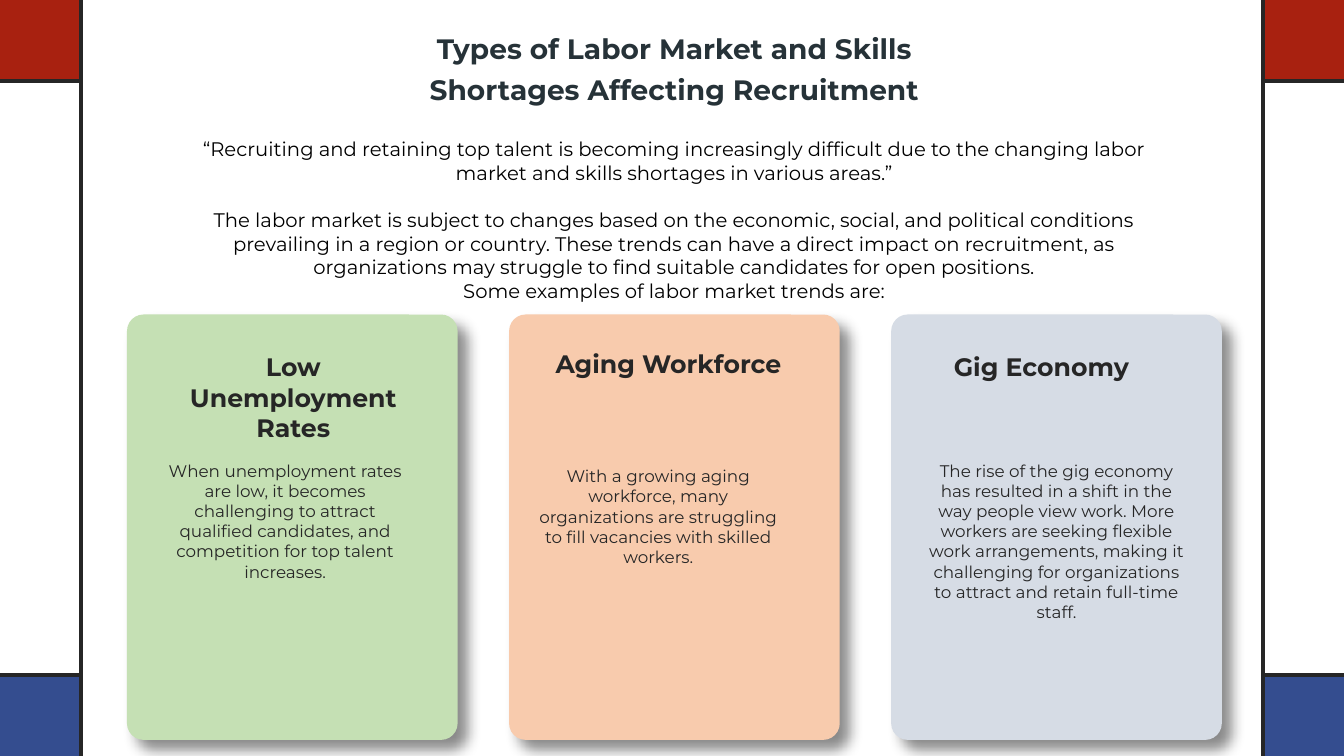
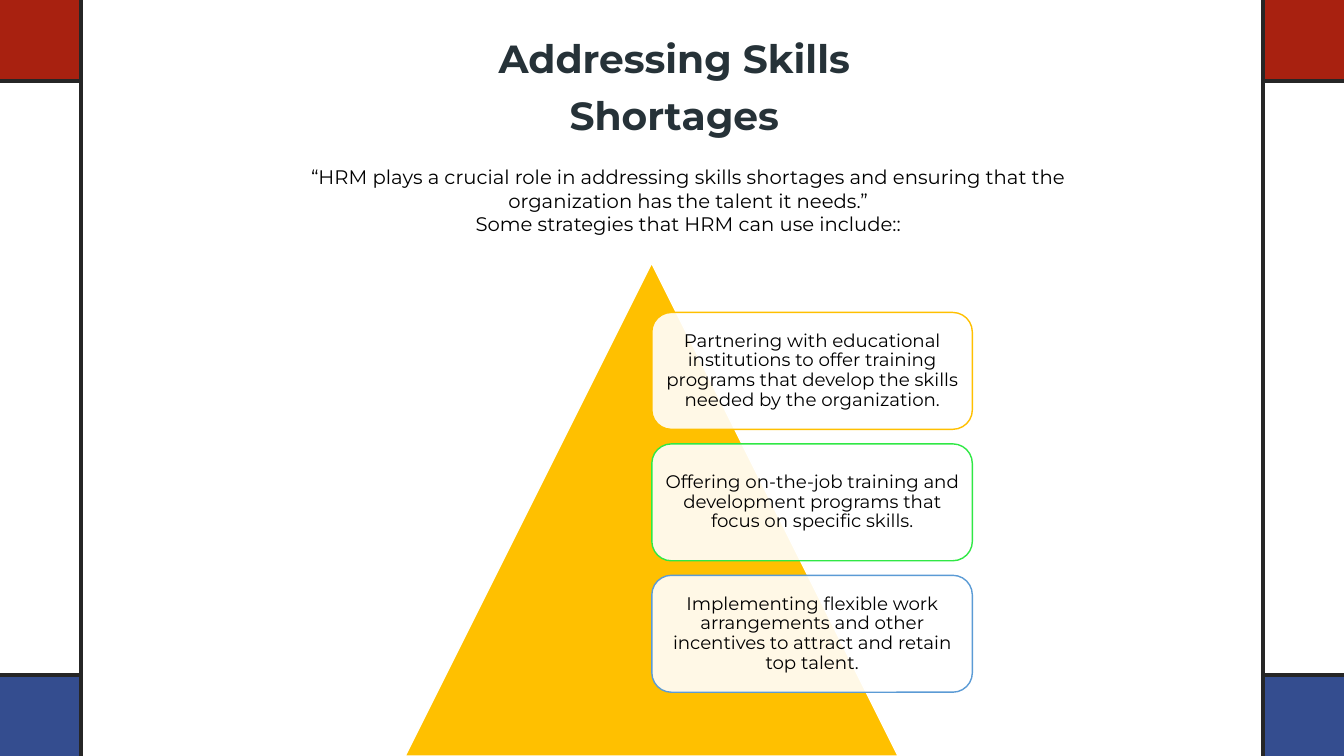
from dataclasses import dataclass
from typing import Any, NamedTuple

from lxml import etree
from pptx import Presentation
from pptx import util as u
from pptx.dml.color import RGBColor
from pptx.enum import shapes, text
from pptx.oxml import ns
from pptx.shapes.autoshape import Shape
from pptx.slide import Slide
from pptx.text.text import TextFrame

# Square grid: 100 columns across a 13.33 by 7.5 inch slide.
COLUMNS, ROWS = 100, 56.25
CELL = u.Inches(7.5) / ROWS


@dataclass(frozen=True)
class Theme:
    font: str = "Montserrat"
    red: str = "A82110"
    blue: str = "344D8F"
    rule: str = "262626"
    title: str = "263238"
    black: str = "000000"
    white: str = "FFFFFF"
    amber: str = "FFC000"
    green: str = "30E845"
    sky: str = "5B9BD5"
    mint: str = "C5E0B4"
    peach: str = "F8CBAD"
    mist: str = "D6DCE5"
    long_title_size: float = 20
    short_title_size: float = 28
    intro_size: float = 14
    heading_size: float = 18
    body_size: float = 12
    strategy_size: float = 13
    rule_width: float = 2.75


THEME = Theme()


class Area(NamedTuple):
    """A rectangle in grid cells."""
    left: float
    top: float
    width: float
    height: float

    def lengths(self) -> list[int]:
        return [cells(value) for value in self]


class Offset(NamedTuple):
    column: float
    row: float


@dataclass(frozen=True)
class TextStyle:
    size: float
    colour: str = THEME.black
    bold: bool = False
    spacing: float | None = None
    inset: float | None = None
    anchor: text.MSO_ANCHOR = text.MSO_ANCHOR.TOP


@dataclass(frozen=True)
class Card:
    heading: str
    body: str
    colour: str
    heading_at: Offset
    body_at: Offset


@dataclass(frozen=True)
class Strategy:
    wording: str
    outline: str


HEADING = TextStyle(THEME.heading_size, THEME.rule, bold=True)
BODY = TextStyle(THEME.body_size, THEME.rule)
INTRO = TextStyle(THEME.intro_size)
STRATEGY = TextStyle(THEME.strategy_size, spacing=0.9, inset=0.05,
                     anchor=text.MSO_ANCHOR.MIDDLE)

CARD_AREA = Area(9.45, 23.4, 24.6, 31.65)
CARD_PITCH = 28.43
CARD_TEXT_WIDTH = 20.55
CARDS = (
    Card("Low Unemployment Rates",
         "When unemployment rates are low, it becomes challenging to attract "
         "qualified candidates, and competition for top talent increases.",
         THEME.mint, Offset(2.1, 2.4), Offset(1.5, 10.5)),
    Card("Aging Workforce",
         "With a growing aging workforce, many organizations are struggling "
         "to fill vacancies with skilled workers.",
         THEME.peach, Offset(1.58, 2.18), Offset(0.83, 10.9)),
    Card("Gig Economy",
         "The rise of the gig economy has resulted in a shift in the way "
         "people view work. More workers are seeking flexible work "
         "arrangements, making it challenging for organizations to attract "
         "and retain full-time staff.",
         THEME.mist, Offset(0.9, 2.4), Offset(2.03, 10.5)),
)

PYRAMID_AREA = Area(30.15, 19.58, 36.67, 36.67)
STRATEGY_AREA = Area(48.5, 23.25, 23.85, 8.7)
STRATEGY_PITCH = 9.78
STRATEGIES = (
    Strategy("Partnering with educational institutions to offer training "
             "programs that develop the skills needed by the organization.",
             THEME.amber),
    Strategy("Offering on-the-job training and development programs that "
             "focus on specific skills.", THEME.green),
    Strategy("Implementing flexible work arrangements and other incentives "
             "to attract and retain top talent.", THEME.sky),
)


def cells(count: float) -> int:
    return round(count * CELL)


def rgb(colour: str) -> RGBColor:
    return RGBColor.from_string(colour)


def set_values(target: Any, values: dict[str, Any]) -> None:
    for name, value in values.items():
        setattr(target, name, value)


def write(frame: TextFrame, lines: tuple[str, ...], style: TextStyle,
          gap_before: int | None = None) -> None:
    """Fill a frame; gap_before is the line that gets a line's space above."""
    set_values(frame, {"word_wrap": True, "vertical_anchor": style.anchor})
    if style.inset is not None:
        sides = ("left", "top", "right", "bottom")
        set_values(frame, {f"margin_{side}": u.Inches(style.inset)
                           for side in sides})
    for index, line in enumerate(lines):
        para = frame.add_paragraph() if index else frame.paragraphs[0]
        para.alignment = text.PP_ALIGN.CENTER
        if style.spacing:
            para.line_spacing = style.spacing
        if index and index == gap_before:
            para.space_before = u.Pt(style.size * 1.22)
        span = para.add_run()
        span.text = line
        set_values(span.font, {"name": THEME.font, "size": u.Pt(style.size),
                               "bold": style.bold})
        span.font.color.rgb = rgb(style.colour)


def add_text(page: Slide, area: Area, lines: tuple[str, ...],
             style: TextStyle, gap_before: int | None = None) -> None:
    box = page.shapes.add_textbox(*area.lengths())
    write(box.text_frame, lines, style, gap_before)


def add_panel(page: Slide, kind: shapes.MSO_SHAPE, area: Area, fill: str,
              outline: str | None = None) -> Shape:
    panel = page.shapes.add_shape(kind, *area.lengths())
    panel.shadow.inherit = False
    panel.fill.solid()
    panel.fill.fore_color.rgb = rgb(fill)
    if outline:
        panel.line.color.rgb = rgb(outline)
        panel.line.width = u.Pt(1)
    else:
        panel.line.fill.background()
    return panel


def add_alpha(colour: Any, percent: int) -> None:
    etree.SubElement(colour, ns.qn("a:alpha"), val=str(percent * 1000))


def cast_shadow(panel: Shape) -> None:
    effects = panel._element.spPr.find(ns.qn("a:effectLst"))
    distance = str(u.Pt(10))
    shadow = etree.SubElement(
        effects, ns.qn("a:outerShdw"), blurRad=distance, dist=distance,
        dir=str(45 * 60000), algn="tl", rotWithShape="0")
    colour = etree.SubElement(shadow, ns.qn("a:srgbClr"), val=THEME.black)
    add_alpha(colour, 45)


def add_rule(page: Slide, start: Offset, end: Offset) -> None:
    rule = page.shapes.add_connector(
        shapes.MSO_CONNECTOR.STRAIGHT,
        *(cells(value) for value in (*start, *end)))
    rule.line.color.rgb = rgb(THEME.rule)
    rule.line.width = u.Pt(THEME.rule_width)
    etree.SubElement(rule._element.spPr, ns.qn("a:effectLst"))


def add_frame(page: Slide) -> None:
    """Draw the coloured corners and the rules beside them."""
    band = 6
    for left, inner in ((0, band), (COLUMNS - band, COLUMNS - band)):
        for top, edge, colour in ((0, band, THEME.red),
                                  (ROWS - band, ROWS - band, THEME.blue)):
            add_panel(page, shapes.MSO_SHAPE.RECTANGLE,
                      Area(left, top, band, band), colour)
            add_rule(page, Offset(left, edge), Offset(left + band, edge))
        add_rule(page, Offset(inner, 0), Offset(inner, ROWS))


def add_page(deck: Any, title: str, size: float) -> Slide:
    page = deck.slides.add_slide(deck.slide_layouts[6])
    add_frame(page)
    style = TextStyle(size, THEME.title, bold=True, spacing=1.2, inset=0)
    add_text(page, Area(31.2, 1.88, 37.95, 6), (title,), style)
    return page


def add_card(page: Slide, index: int, card: Card) -> None:
    area = CARD_AREA._replace(left=CARD_AREA.left + index * CARD_PITCH)
    panel = add_panel(page, shapes.MSO_SHAPE.ROUNDED_RECTANGLE, area,
                      card.colour)
    panel.adjustments[0] = 0.05
    cast_shadow(panel)
    for wording, offset, height, style in (
            (card.heading, card.heading_at, 5, HEADING),
            (card.body, card.body_at, 12, BODY)):
        place = Area(area.left + offset.column, area.top + offset.row,
                     CARD_TEXT_WIDTH, height)
        add_text(page, place, (wording,), style)


def add_strategy(page: Slide, index: int, strategy: Strategy) -> None:
    area = STRATEGY_AREA._replace(
        top=STRATEGY_AREA.top + index * STRATEGY_PITCH)
    panel = add_panel(page, shapes.MSO_SHAPE.ROUNDED_RECTANGLE, area,
                      THEME.white, strategy.outline)
    fill = panel._element.spPr.find(ns.qn("a:solidFill"))
    add_alpha(fill[0], 90)
    write(panel.text_frame, (strategy.wording,), STRATEGY)


def add_shortage_types(deck: Any) -> None:
    page = add_page(
        deck, "Types of Labor Market and Skills Shortages Affecting Recruitment",
        THEME.long_title_size)
    add_text(page, Area(12.6, 9.83, 75.15, 13.5), (
        "“Recruiting and retaining top talent is becoming increasingly "
        "difficult due to the changing labor",
        "market and skills shortages in various areas.”",
        "The labor market is subject to changes based on the economic, "
        "social, and political conditions",
        "prevailing in a region or country. These trends can have a direct "
        "impact on recruitment, as",
        "organizations may struggle to find suitable candidates for open "
        "positions.",
        "Some examples of labor market trends are:",
    ), INTRO, gap_before=2)
    for index, card in enumerate(CARDS):
        add_card(page, index, card)


def add_shortage_answers(deck: Any) -> None:
    page = add_page(deck, "Addressing Skills Shortages",
                    THEME.short_title_size)
    add_text(page, Area(13.65, 11.93, 75.15, 7), (
        "“HRM plays a crucial role in addressing skills shortages and "
        "ensuring that the",
        "organization has the talent it needs.”",
        "Some strategies that HRM can use include::",
    ), INTRO)
    add_panel(page, shapes.MSO_SHAPE.ISOSCELES_TRIANGLE, PYRAMID_AREA,
              THEME.amber, THEME.white)
    for index, strategy in enumerate(STRATEGIES):
        add_strategy(page, index, strategy)


def main() -> None:
    deck = Presentation()
    set_values(deck, {"slide_width": cells(COLUMNS),
                      "slide_height": cells(ROWS)})
    add_shortage_types(deck)
    add_shortage_answers(deck)
    deck.save("out.pptx")


if __name__ == "__main__":
    main()
